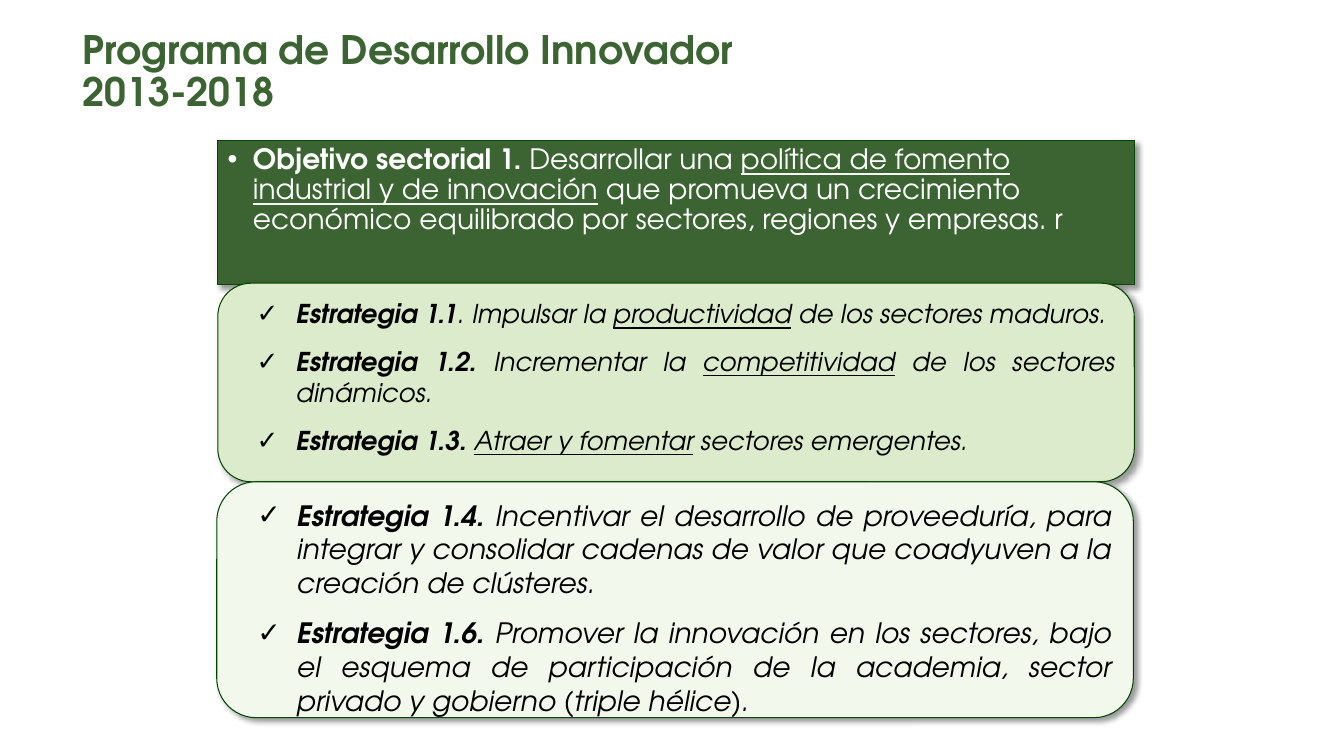
from lxml.etree import SubElement
from pptx import Presentation
from pptx.dml.color import RGBColor
from pptx.enum.shapes import MSO_SHAPE
from pptx.enum.text import MSO_ANCHOR, PP_ALIGN
from pptx.oxml.ns import qn
from pptx.util import Inches, Pt

DARK_GREEN = RGBColor(0x3B, 0x64, 0x32)
OUTLINE_GREEN = RGBColor(0x00, 0x46, 0x00)
LIGHT_GREEN = RGBColor(0xDC, 0xEB, 0xCB)
PALE_GREEN = RGBColor(0xF2, 0xF8, 0xEC)
WHITE = RGBColor(0xFF, 0xFF, 0xFF)
BLACK = RGBColor(0x00, 0x00, 0x00)

BOLD = {"bold": True}
PLAIN = {"bold": False}
UNDERLINED = {"bold": False, "underline": True}

TITLE = [("Programa de Desarrollo Innovador\v2013-2018", BOLD)]
OBJECTIVE = [
    ("Objetivo sectorial 1.", BOLD),
    (" Desarrollar una ", PLAIN),
    ("política de fomento industrial y de innovación", UNDERLINED),
    (" que promueva un crecimiento económico equilibrado por sectores, "
     "regiones y empresas. r", PLAIN),
]
SECTOR_STRATEGIES = [
    [("Estrategia 1.1", BOLD), (". Impulsar la ", PLAIN),
     ("productividad", UNDERLINED), (" de los sectores maduros.", PLAIN)],
    [("Estrategia 1.2. ", BOLD), ("Incrementar la ", PLAIN),
     ("competitividad", UNDERLINED), (" de los sectores dinámicos.", PLAIN)],
    [("Estrategia 1.3. ", BOLD), ("Atraer y fomentar", UNDERLINED),
     (" sectores emergentes.", PLAIN)],
]
INNOVATION_STRATEGIES = [
    [("Estrategia 1.4. ", BOLD),
     ("Incentivar el desarrollo de proveeduría, para integrar y consolidar "
      "cadenas de valor que coadyuven a la creación de clústeres.", PLAIN)],
    [("Estrategia 1.6. ", BOLD),
     ("Promover la innovación en los sectores, bajo el esquema de "
      "participación de la academia, sector privado y gobierno "
      "(triple hélice).", PLAIN)],
]


def set_attributes(target, values):
    for name, value in values.items():
        setattr(target, name, value)


class SlideBuilder:
    font_name = "TeX Gyre Adventor"

    def __init__(self, slide):
        self.slide = slide

    def add_title(self, runs, left, top, width, height):
        box = self.slide.shapes.add_textbox(
            Inches(left), Inches(top), Inches(width), Inches(height))
        set_attributes(box.text_frame, {
            "word_wrap": True, "vertical_anchor": MSO_ANCHOR.MIDDLE})
        paragraph = box.text_frame.paragraphs[0]
        paragraph.line_spacing = 0.9
        self.add_runs(paragraph, runs, {"size": Pt(28)}, DARK_GREEN)

    def add_panel(self, preset, left, top, width, height, fill):
        """Add an outlined, shadowed panel and return its text frame."""
        shape = self.slide.shapes.add_shape(
            preset, Inches(left), Inches(top), Inches(width), Inches(height))
        shape.fill.solid()
        shape.fill.fore_color.rgb = fill
        shape.line.color.rgb = OUTLINE_GREEN
        shape.line.width = Pt(0.75)
        self.add_shadow(shape)
        set_attributes(shape.text_frame, {
            "word_wrap": True, "vertical_anchor": MSO_ANCHOR.TOP})
        return shape.text_frame

    def add_shadow(self, shape):
        shape.shadow.inherit = False
        effects = shape._element.spPr.find(qn("a:effectLst"))
        shadow = SubElement(effects, qn("a:outerShdw"), {
            "blurRad": str(Pt(4)), "dist": str(Pt(3)),
            "dir": str(45 * 60000), "algn": "tl", "rotWithShape": "0"})
        color = SubElement(shadow, qn("a:srgbClr"), val=str(BLACK))
        SubElement(color, qn("a:alpha"), val="40000")

    def add_bullets(self, frame, items, bullet, indent, hanging,
                    paragraph_format, font_format, color):
        for index, runs in enumerate(items):
            paragraph = frame.add_paragraph() if index else frame.paragraphs[0]
            properties = paragraph._p.get_or_add_pPr()
            properties.set("marL", str(Inches(indent)))
            properties.set("indent", str(-Inches(hanging)))
            SubElement(properties, qn("a:buFont"), typeface="Arial")
            SubElement(properties, qn("a:buChar"), char=bullet)
            set_attributes(paragraph, paragraph_format)
            if index:
                paragraph.space_before = Pt(12)
            self.add_runs(paragraph, runs, font_format, color)

    def add_runs(self, paragraph, runs, font_format, color):
        for text, emphasis in runs:
            for index, line in enumerate(text.split("\v")):
                if index:
                    paragraph.add_line_break()
                run = paragraph.add_run()
                run.text = line
                set_attributes(run.font, {
                    "name": self.font_name, **font_format, **emphasis})
                run.font.color.rgb = color


def main():
    presentation = Presentation()
    presentation.slide_width = Inches(13.33)
    presentation.slide_height = Inches(7.5)
    slide = presentation.slides.add_slide(presentation.slide_layouts[6])
    builder = SlideBuilder(slide)

    builder.add_title(TITLE, 0.72, 0.39, 8.9, 0.67)

    objective = builder.add_panel(
        MSO_SHAPE.RECTANGLE, 2.16, 1.39, 9.09, 1.43, DARK_GREEN)
    builder.add_bullets(
        objective, [OBJECTIVE], "•", 0.25, 0.25,
        {"alignment": PP_ALIGN.LEFT, "line_spacing": 0.9},
        {"size": Pt(20)}, WHITE)

    strategy_panels = [
        (SECTOR_STRATEGIES, 2.16, 2.81, 1.97, LIGHT_GREEN, 18.5),
        (INNOVATION_STRATEGIES, 2.15, 4.78, 2.34, PALE_GREEN, 20),
    ]
    for strategies, left, top, height, fill, size in strategy_panels:
        frame = builder.add_panel(
            MSO_SHAPE.ROUNDED_RECTANGLE, left, top, 9.09, height, fill)
        builder.add_bullets(
            frame, strategies, "✓", 0.58, 0.39,
            {"alignment": PP_ALIGN.JUSTIFY},
            {"size": Pt(size), "italic": True}, BLACK)

    presentation.save("out.pptx")


if __name__ == "__main__":
    main()
